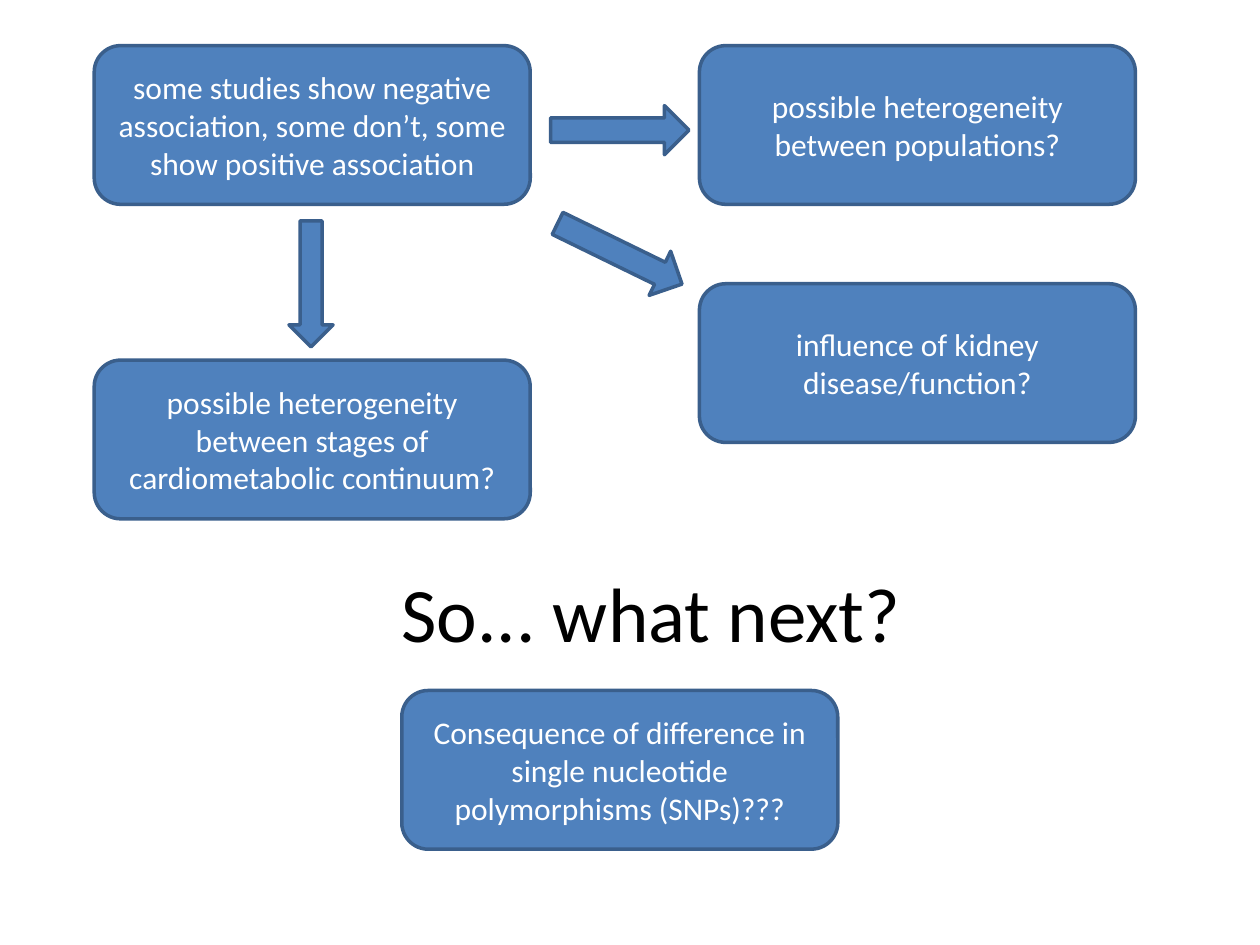
from pptx import Presentation
from pptx.dml.color import RGBColor
from pptx.enum.shapes import MSO_SHAPE as Preset
from pptx.enum.text import MSO_ANCHOR as Anchor, PP_ALIGN as Align
from pptx.util import Cm, Pt


def color(hex_string):
    return RGBColor.from_string(hex_string)


def write(box, text, size=18, ink="FFFFFF", font="Calibri"):
    frame = box.text_frame
    frame.word_wrap = True
    frame.vertical_anchor = Anchor.MIDDLE
    para = frame.paragraphs[0]
    para.alignment = Align.CENTER
    span = para.add_run()
    span.text = text
    span.font.name = font
    span.font.size = Pt(size)
    span.font.color.rgb = color(ink)


deck = Presentation()
deck.slide_width, deck.slide_height = Cm(25.4), Cm(19.05)
page = deck.slides.add_slide(deck.slide_layouts[6])

title = page.shapes.add_textbox(Cm(1.7), Cm(10.74), Cm(22.86), Cm(3.18))
write(title, "So... what next?", size=44, ink="000000")

left_column, right_column, top_row = 1.9, 14.1, 0.92
ideas = [
    (left_column, top_row, "some studies show negative association, some don’t, some show positive association"),
    (right_column, top_row, "possible heterogeneity between populations?"),
    (left_column, 7.26, "possible heterogeneity between stages of cardiometabolic continuum?"),
    (right_column, 5.72, "influence of kidney disease/function?"),
    (8.1, 13.92, "Consequence of difference in single nucleotide polymorphisms (SNPs)???"),
]
arrows = [
    (11.1, 2.13, 2.79, 0.99, 0),
    (11.1, 4.62, 2.79, 0.99, 26),
    (5, 5.28, 2.54, 0.89, 90),
]

blocks = []
for left, top, text in ideas:
    box = page.shapes.add_shape(Preset.ROUNDED_RECTANGLE, Cm(left), Cm(top), Cm(8.79), Cm(3.2))
    write(box, text)
    blocks.append(box)

for left, top, width, height, angle in arrows:
    arrow = page.shapes.add_shape(Preset.RIGHT_ARROW, Cm(left), Cm(top), Cm(width), Cm(height))
    arrow.rotation = angle
    blocks.append(arrow)

for block in blocks:
    block.shadow.inherit = False
    block.fill.solid()
    block.fill.fore_color.rgb = color("4F81BD")
    block.line.color.rgb = color("3A5F8C")
    block.line.width = Pt(2)

deck.save("out.pptx")
